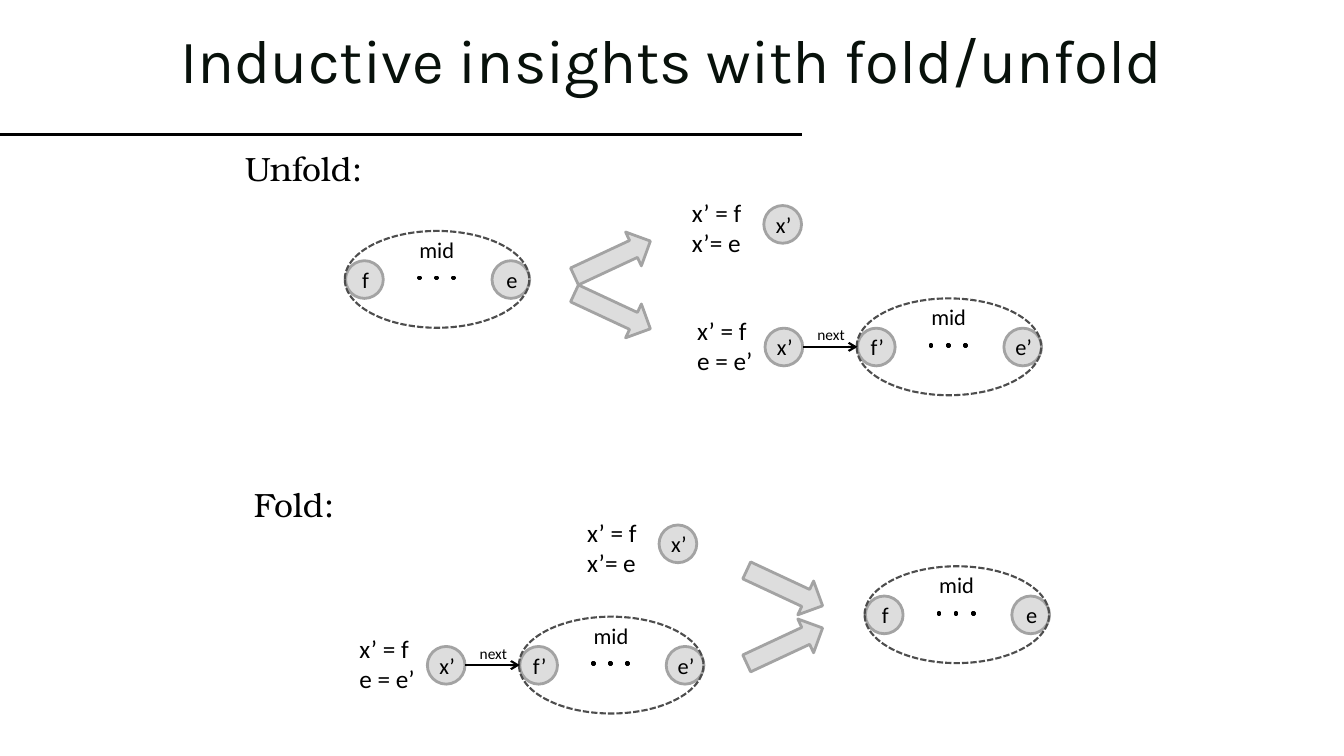
from lxml.etree import SubElement
from pptx import Presentation
from pptx.dml.color import RGBColor
from pptx.enum.dml import MSO_LINE
from pptx.enum.shapes import MSO_CONNECTOR, MSO_SHAPE
from pptx.enum.text import MSO_ANCHOR, PP_ALIGN
from pptx.oxml.ns import qn
from pptx.util import Cm, Pt

BLACK = RGBColor(0x00, 0x00, 0x00)
TITLE_INK = RGBColor(0x08, 0x11, 0x0B)
NODE_FILL = RGBColor(0xDD, 0xDD, 0xDD)
NODE_EDGE = RGBColor(0xA3, 0xA3, 0xA3)
SEGMENT_EDGE = RGBColor(0x4D, 0x4D, 0x4D)

BODY_FONT = "Calibri"
HEADING_FONT = "TeX Gyre Bonum"
TITLE_FONT = "Karla"
NODE_SIZE = 0.95


class FoldSlide:
    def __init__(self, slide):
        self.shapes = slide.shapes

    def fill_text(self, frame, lines, size, font=BODY_FONT, color=BLACK, align=PP_ALIGN.LEFT):
        frame.text = "\n".join(lines)
        for paragraph in frame.paragraphs:
            paragraph.alignment = align
            paragraph.font.size = Pt(size)
            paragraph.font.name = font
            paragraph.font.color.rgb = color

    def label(self, x, y, width, height, lines, size, font=BODY_FONT):
        frame = self.shapes.add_textbox(Cm(x), Cm(y), Cm(width), Cm(height)).text_frame
        frame.word_wrap = False
        self.fill_text(frame, lines, size, font)

    def title(self, words):
        frame = self.shapes.add_textbox(Cm(4.29), Cm(0), Cm(25.32), Cm(3.18)).text_frame
        frame.word_wrap = True
        frame.vertical_anchor = MSO_ANCHOR.MIDDLE
        self.fill_text(frame, [words], 44, TITLE_FONT, TITLE_INK)
        frame.paragraphs[0].line_spacing = 0.9

    def outline(self, kind, x, y, width, height, edge, weight, fill=None, parent=None):
        shape = (parent or self.shapes).add_shape(kind, Cm(x), Cm(y), Cm(width), Cm(height))
        shape.shadow.inherit = False
        if fill is None:
            shape.fill.background()
        else:
            shape.fill.solid()
            shape.fill.fore_color.rgb = fill
        shape.line.color.rgb = edge
        shape.line.width = Pt(weight)
        return shape

    def line(self, x1, x2, y, weight, arrow=False):
        connector = self.shapes.add_connector(MSO_CONNECTOR.STRAIGHT, Cm(x1), Cm(y), Cm(x2), Cm(y))
        connector.line.color.rgb = BLACK
        connector.line.width = Pt(weight)
        properties = connector.element.spPr
        if arrow:
            SubElement(properties.find(qn("a:ln")), qn("a:tailEnd"), type="arrow")
        SubElement(properties, qn("a:effectLst"))

    def node(self, x, y, name):
        circle = self.outline(MSO_SHAPE.OVAL, x, y, NODE_SIZE, NODE_SIZE, NODE_EDGE, 2, NODE_FILL)
        frame = circle.text_frame
        frame.margin_left, frame.margin_right = Cm(0.05), Cm(0)
        frame.vertical_anchor = MSO_ANCHOR.MIDDLE
        self.fill_text(frame, [name], 16, align=PP_ALIGN.CENTER)

    def block_arrow(self, x, y, angle):
        arrow = self.outline(MSO_SHAPE.RIGHT_ARROW, x, y, 2.11, 0.94, NODE_EDGE, 2, NODE_FILL)
        arrow.rotation = angle

    def segment(self, x, y, first, last):
        self.node(x + 0.02, y + 0.75, first)
        self.node(x + 3.71, y + 0.75, last)
        dots = self.shapes.add_group_shape().shapes
        for i in range(3):
            self.outline(MSO_SHAPE.RECTANGLE, x + 1.85 + 0.43 * i, y + 1.16,
                         0.05, 0.05, BLACK, 2, BLACK, dots)
        self.label(x + 1.63, y, 1.4, 0.94, ["mid"], 16)
        border = self.outline(MSO_SHAPE.OVAL, x, y, 4.65, 2.44, SEGMENT_EDGE, 1.5)
        border.line.dash_style = MSO_LINE.SQUARE_DOT

    def equations(self, x, y, lines):
        self.label(x, y, 1.93, 1.8, lines, 18)

    def single_case(self, x, y):
        self.node(x, y, "x’")
        self.equations(x - 2.06, y - 0.33, ["x’ = f", "x’= e"])

    def linked_case(self, x, y):
        self.segment(x, y, "f’", "e’")
        self.node(x - 2.31, y + 0.75, "x’")
        self.line(x - 1.35, x + 0.02, y + 1.22, 1.5, arrow=True)
        self.label(x - 1.24, y + 0.56, 1.22, 0.74, ["next"], 11)
        self.equations(x - 4.27, y + 0.29, ["x’ = f", "e = e’"])

    def heading(self, x, y, width, words):
        self.label(x, y, width, 1.27, [words], 24, HEADING_FONT)


def main():
    deck = Presentation()
    deck.slide_width, deck.slide_height = Cm(33.87), Cm(19.05)
    page = FoldSlide(deck.slides.add_slide(deck.slide_layouts[6]))

    page.line(0, 20.22, 3.38, 2.25)
    page.title("Inductive insights with fold/unfold")

    page.heading(5.92, 3.61, 3.56, "Unfold:")
    page.segment(8.69, 5.82, "f", "e")
    page.linked_case(21.59, 7.52)
    page.single_case(19.25, 5.18)
    page.block_arrow(14.38, 7.37, 25)
    page.block_arrow(14.38, 6.05, 335)

    page.heading(6.15, 12.07, 2.59, "Fold:")
    page.segment(21.79, 14.27, "f", "e")
    page.linked_case(13.08, 15.54)
    page.single_case(16.61, 13.23)
    page.block_arrow(18.72, 14.35, 25)
    page.block_arrow(18.72, 15.8, 335)

    deck.save("out.pptx")


if __name__ == "__main__":
    main()
